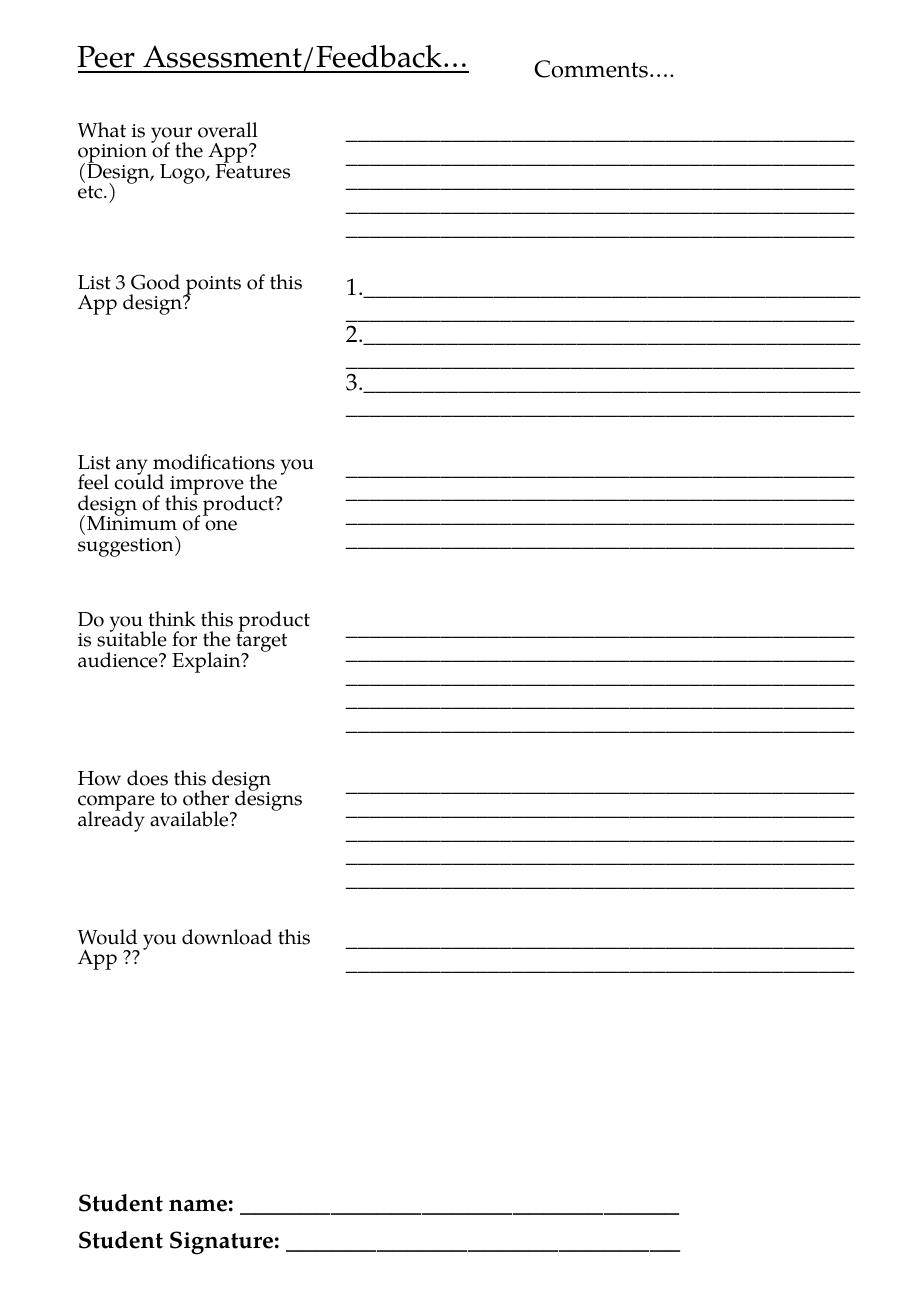
"""Builds a one-page peer assessment and feedback form."""
from pptx import Presentation
from pptx.dml.color import RGBColor
from pptx.enum.text import PP_ALIGN
from pptx.util import Cm, Pt


def color(hex_value):
    return RGBColor.from_string(hex_value)


class FormPage:
    """Holds the form's style and slide, and adds its elements."""
    font_name = "TeX Gyre Pagella"
    ink = "000000"
    inset = 0.13

    def __init__(self, slide):
        self.slide = slide

    def style(self, font, size):
        font.name = self.font_name
        font.size = Pt(size)
        font.color.rgb = color(self.ink)

    def text_box(self, left, top, width, height):
        frame = self.slide.shapes.add_textbox(
            Cm(left), Cm(top), Cm(width), Cm(height)).text_frame
        frame.word_wrap = True
        return frame

    def title(self, text, left, top, width, height):
        heading = self.text_box(left, top, width, height).paragraphs[0]
        heading.text = text
        heading.line_spacing = 1.07
        heading.space_after = Pt(8)
        self.style(heading.font, 18)
        heading.font.underline = True

    def signature_lines(self, entries, left, top, width, height):
        frame = self.text_box(left, top, width, height)
        for index, (label, blanks) in enumerate(entries):
            entry = frame.add_paragraph() if index else frame.paragraphs[0]
            for text, size, bold in ((label + " ", 14, True), ("_" * blanks, 18, False)):
                run = entry.add_run()
                run.text = text
                self.style(run.font, size)
                run.font.bold = bold

    def fill_cell(self, cell, text, size, gap, align=PP_ALIGN.LEFT):
        cell.fill.background()
        cell.margin_top = Cm(self.inset + gap)
        cell.margin_bottom = 0
        cell.text = text
        for paragraph in cell.text_frame.paragraphs:
            paragraph.alignment = align
            self.style(paragraph.font, size)

    def question_table(self, heading, questions, left, top, widths, heading_height):
        heights = [heading_height] + [question[0] for question in questions]
        table = self.slide.shapes.add_table(
            len(heights), len(widths), Cm(left), Cm(top),
            Cm(sum(widths)), Cm(sum(heights))).table
        table.first_row = table.horz_banding = False
        for column, width in zip(table.columns, widths):
            column.width = Cm(width)
        for row, height in zip(table.rows, heights):
            row.height = Cm(height)
        self.fill_cell(table.cell(0, 0), "", 12, 0)
        self.fill_cell(table.cell(0, 1), heading, 14, 0, PP_ALIGN.CENTER)
        for index, (_, question_gap, answer_gap, question, answer) in enumerate(questions, 1):
            self.fill_cell(table.cell(index, 0), question, 12, question_gap)
            self.fill_cell(table.cell(index, 1), answer, 14, answer_gap)


def answer_lines(count):
    return "_" * (43 * count)


def main():
    presentation = Presentation()
    presentation.slide_width = Cm(19.05)
    presentation.slide_height = Cm(27.51)
    page = FormPage(presentation.slides.add_slide(presentation.slide_layouts[6]))

    good_points = "".join(f"{number}." + "_" * 85 for number in (1, 2, 3))
    questions = [
        (2.75, 0, 0,
         "What is your overall opinion of the App? (Design, Logo, Features etc.)",
         answer_lines(5)),
        (3.76, 0.43, 0.5, "List 3 Good points of this App design?", good_points),
        (2.85, 0.43, 0.5,
         "List any modifications you feel could improve the design of this product?\n"
         "(Minimum of one suggestion)",
         answer_lines(4)),
        (3.76, 0.86, 1,
         "Do you think this product is suitable for the target audience? Explain?",
         answer_lines(5)),
        (3.25, 0.43, 0.5,
         "How does this design compare to other designs already available?",
         answer_lines(5)),
        (4.83, 0.5, 0.5, "Would you download this App ??", answer_lines(2)),
    ]
    page.question_table("Comments….", questions, 1.37, 1.12, (5.61, 11.33), 1.31)
    page.title("Peer Assessment/Feedback…", 1.38, 0.6, 9.53, 1.09)
    page.signature_lines([("Student name:", 29), ("Student Signature:", 26)],
                         1.38, 24.57, 13.77, 1.8)
    presentation.save("out.pptx")


if __name__ == "__main__":
    main()
